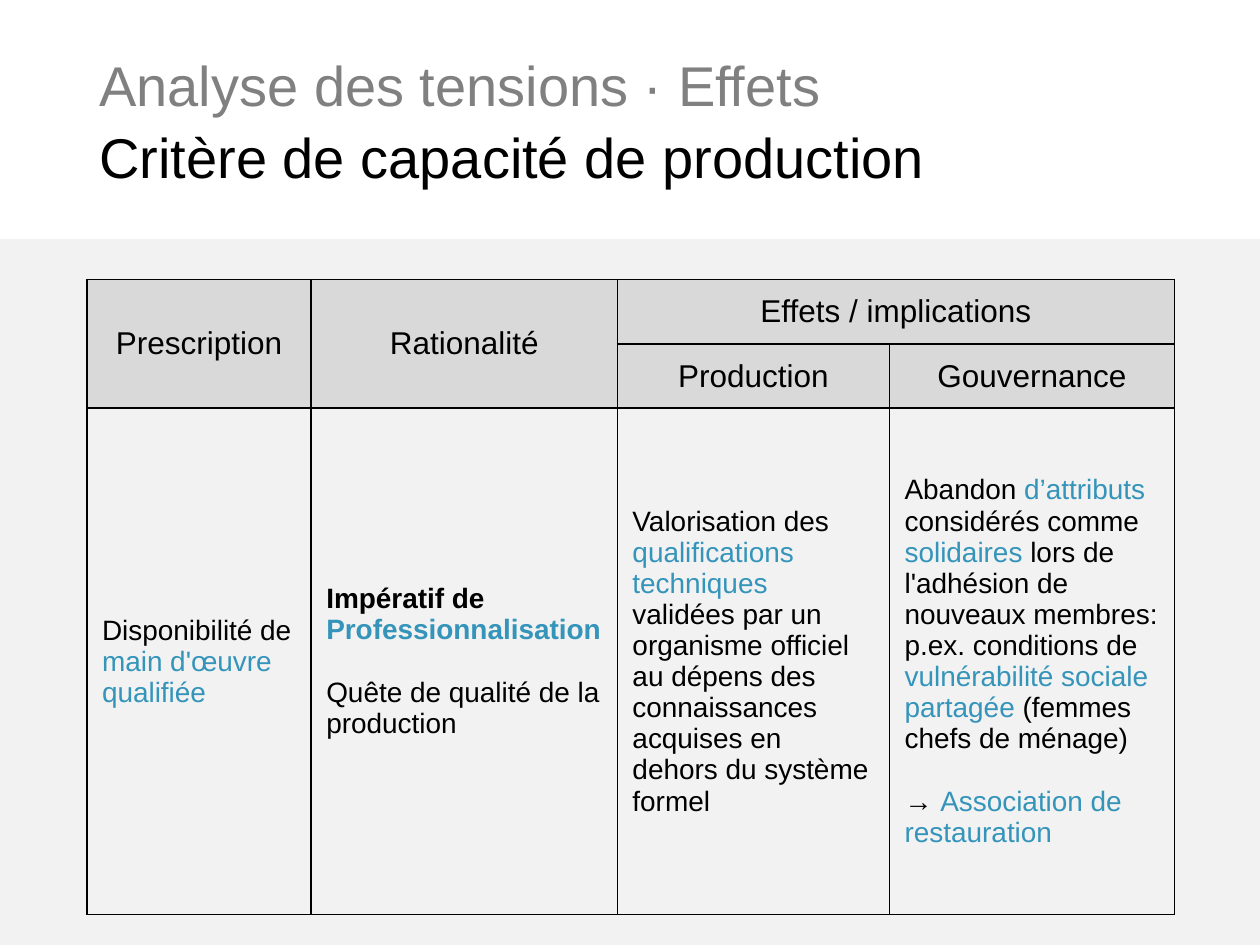
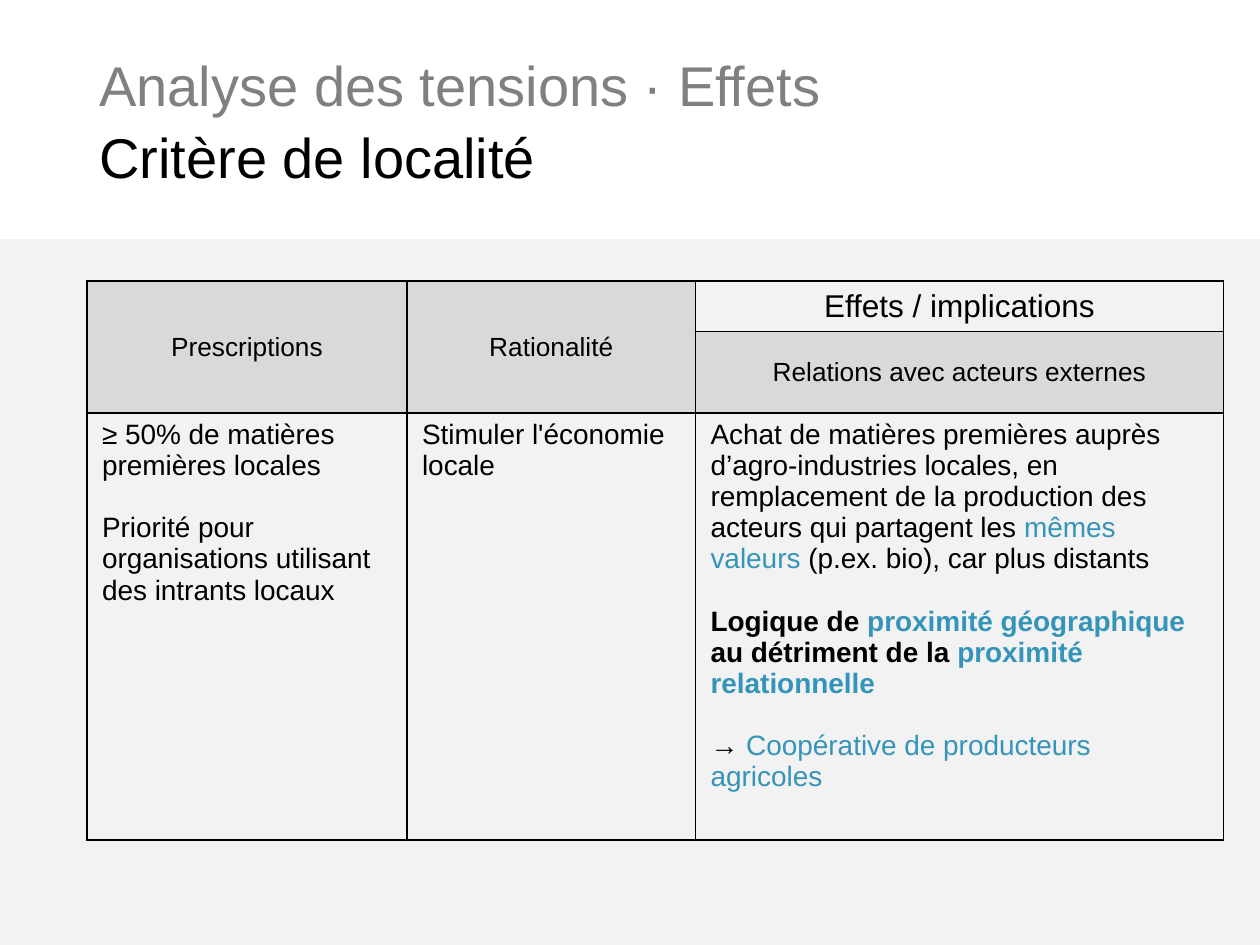
"""Two slides on tensions and their effects, each a title above a criteria table."""
from dataclasses import dataclass

from lxml import etree
from pptx import Presentation
from pptx.dml.color import RGBColor
from pptx.enum.shapes import MSO_SHAPE
from pptx.enum.text import MSO_ANCHOR, PP_ALIGN
from pptx.oxml.ns import qn
from pptx.util import Inches, Pt

RECT = MSO_SHAPE.RECTANGLE
TOP, MIDDLE, BOTTOM = MSO_ANCHOR.TOP, MSO_ANCHOR.MIDDLE, MSO_ANCHOR.BOTTOM
LEFT, CENTER = PP_ALIGN.LEFT, PP_ALIGN.CENTER

COLORS = {
    "band": "F2F2F2",
    "header": "D9D9D9",
    "text": "000000",
    "muted": "808080",
    "accent": "3494BA",
}
FONT = "Arial"
WIDTH, HEIGHT = Inches(10), Inches(7.5)
MARGIN = 6.9
SECTION = "Analyse des tensions · Effets"
TITLE_SIZE, BODY_SIZE = 32, 16
BLANK_LINE = Pt(17.9)


@dataclass(frozen=True)
class Para:
    """A body paragraph; text between bars takes the accent colour."""
    text: str
    bold: bool = False
    gap: bool = False


@dataclass(frozen=True)
class Header:
    """A header cell with its grid place and span."""
    text: str
    row: int
    col: int
    rows: int = 1
    cols: int = 1
    size: int = 18
    filled: bool = True


@dataclass(frozen=True)
class Criterion:
    """One slide: table columns and rows are percentages of the slide."""
    title: str
    top: float
    cols: list[float]
    rows: list[float]
    headers: list[Header]
    body: list[list[Para]]
    anchor: MSO_ANCHOR


CRITERIA = [
    Criterion(
        title="Critère de capacité de production",
        top=29.6,
        cols=[17.8, 24.3, 21.6, 22.6],
        rows=[6.8, 6.8, 53.6],
        headers=[
            Header("Prescription", 0, 0, rows=2),
            Header("Rationalité", 0, 1, rows=2),
            Header("Effets / implications", 0, 2, cols=2),
            Header("Production", 1, 2),
            Header("Gouvernance", 1, 3),
        ],
        body=[
            [Para("Disponibilité de |main d'œuvre qualifiée|")],
            [Para("Impératif de |Professionnalisation|", bold=True),
             Para("Quête de qualité de la production", gap=True)],
            [Para("Valorisation des |qualifications techniques |validées par un "
                  "organisme officiel au dépens des connaissances acquises en "
                  "dehors du système formel")],
            [Para("Abandon |d’attributs| considérés comme |solidaires| lors de "
                  "l'adhésion de nouveaux membres:"),
             Para("p.ex. conditions de |vulnérabilité sociale partagée |"
                  "(femmes chefs de ménage)"),
             Para("→ |Association de restauration|", gap=True)],
        ],
        anchor=MIDDLE,
    ),
    Criterion(
        title="Critère de localité",
        top=29.75,
        cols=[25.4, 22.9, 41.9],
        rows=[5.2, 8.6, 45.2],
        headers=[
            Header("Prescriptions", 0, 0, rows=2, size=15),
            Header("Rationalité", 0, 1, rows=2, size=15),
            Header("Effets / implications", 0, 2, filled=False),
            Header("Relations avec acteurs externes", 1, 2, size=15),
        ],
        body=[
            [Para("≥ 50% de matières premières locales"),
             Para("Priorité pour organisations utilisant des intrants locaux",
                  gap=True)],
            [Para("Stimuler l'économie locale")],
            [Para("Achat de matières premières auprès d’agro-industries locales, "
                  "en remplacement de la production des acteurs qui partagent "
                  "les |mêmes valeurs |(p.ex. bio), car plus distants"),
             Para("Logique de| proximité géographique |au détriment de la"
                  "| proximité relationnelle|", bold=True, gap=True),
             Para("→ |Coopérative de producteurs agricoles|", gap=True)],
        ],
        anchor=TOP,
    ),
]


def x(share: float) -> int:
    """Turn a percentage of the slide width into a length."""
    return round(WIDTH * share / 100)


def y(share: float) -> int:
    """Turn a percentage of the slide height into a length."""
    return round(HEIGHT * share / 100)


def rgb(name: str) -> RGBColor:
    """Look up a named colour."""
    return RGBColor.from_string(COLORS[name])


def style_run(r, size: int, color: str = "text", bold: bool = False) -> None:
    """Give a run its font, size, colour and weight."""
    r.font.name, r.font.size, r.font.bold = FONT, Pt(size), bold
    r.font.color.rgb = rgb(color)


def add_band(s) -> None:
    """Draw the pale band behind the table."""
    top = y(25.3)
    sp = s.shapes.add_shape(RECT, 0, top, WIDTH, HEIGHT - top)
    sp.shadow.inherit = False
    sp.fill.solid()
    sp.fill.fore_color.rgb = rgb("band")
    sp.line.fill.background()


def add_title(s, title: str) -> None:
    """Write the section name and the slide title below it."""
    sp = s.shapes.add_textbox(x(MARGIN), y(4.9), x(86.2), y(15.8))
    tf = sp.text_frame
    tf.word_wrap, tf.vertical_anchor = True, BOTTOM
    p = tf.paragraphs[0]
    p.text = f"{SECTION}\v{title}"
    p.line_spacing = 1.07
    for r, color in zip(p.runs, ("muted", "text")):
        style_run(r, TITLE_SIZE, color)


def add_borders(cell) -> None:
    """Draw a one-point line on each side of a cell."""
    props = cell._tc.get_or_add_tcPr()
    for side in ("a:lnL", "a:lnR", "a:lnT", "a:lnB"):
        line = etree.SubElement(props, qn(side), w=str(Pt(1)))
        fill = etree.SubElement(line, qn("a:solidFill"))
        etree.SubElement(fill, qn("a:srgbClr"), val=COLORS["text"])


def format_cell(cell, anchor: MSO_ANCHOR, filled: bool) -> None:
    """Set the insets, anchor, borders and fill of a cell."""
    cell.margin_left = cell.margin_right = Inches(0.12)
    cell.margin_top = cell.margin_bottom = Inches(0.05)
    cell.vertical_anchor = anchor
    add_borders(cell)
    if filled:
        cell.fill.solid()
        cell.fill.fore_color.rgb = rgb("header")
    else:
        cell.fill.background()


def write_header(table, header: Header) -> None:
    """Merge and write a header cell."""
    cell = table.cell(header.row, header.col)
    last_row = header.row + header.rows - 1
    last_col = header.col + header.cols - 1
    for row in range(header.row, last_row + 1):
        for col in range(header.col, last_col + 1):
            format_cell(table.cell(row, col), MIDDLE, header.filled)
    if header.rows * header.cols > 1:
        cell.merge(table.cell(last_row, last_col))
    cell.text_frame.text = header.text
    p = cell.text_frame.paragraphs[0]
    p.alignment = CENTER
    style_run(p.runs[0], header.size)


def write_body(cell, paras: list[Para], anchor: MSO_ANCHOR) -> None:
    """Write the paragraphs of a body cell."""
    format_cell(cell, anchor, False)
    tf = cell.text_frame
    for i, para in enumerate(paras):
        p = tf.add_paragraph() if i else tf.paragraphs[0]
        p.alignment = LEFT
        if para.gap:
            p.space_before = BLANK_LINE
        for j, part in enumerate(para.text.split("|")):
            if part:
                r = p.add_run()
                r.text = part
                style_run(r, BODY_SIZE, "accent" if j % 2 else "text", para.bold)


def add_criteria_table(s, criterion: Criterion) -> None:
    """Build the table of prescriptions, rationale and effects."""
    cols, rows = criterion.cols, criterion.rows
    table = s.shapes.add_table(len(rows), len(cols), x(MARGIN), y(criterion.top),
                               x(sum(cols)), y(sum(rows))).table
    table.first_row = table.horz_banding = False
    for column, share in zip(table.columns, cols):
        column.width = x(share)
    for row, share in zip(table.rows, rows):
        row.height = y(share)
    for header in criterion.headers:
        write_header(table, header)
    for col, paras in enumerate(criterion.body):
        write_body(table.cell(len(rows) - 1, col), paras, criterion.anchor)


def main() -> None:
    """Build and save the presentation."""
    prs = Presentation()
    prs.slide_width, prs.slide_height = WIDTH, HEIGHT
    for criterion in CRITERIA:
        s = prs.slides.add_slide(prs.slide_layouts[6])
        add_band(s)
        add_title(s, criterion.title)
        add_criteria_table(s, criterion)
    prs.save("out.pptx")


if __name__ == "__main__":
    main()
